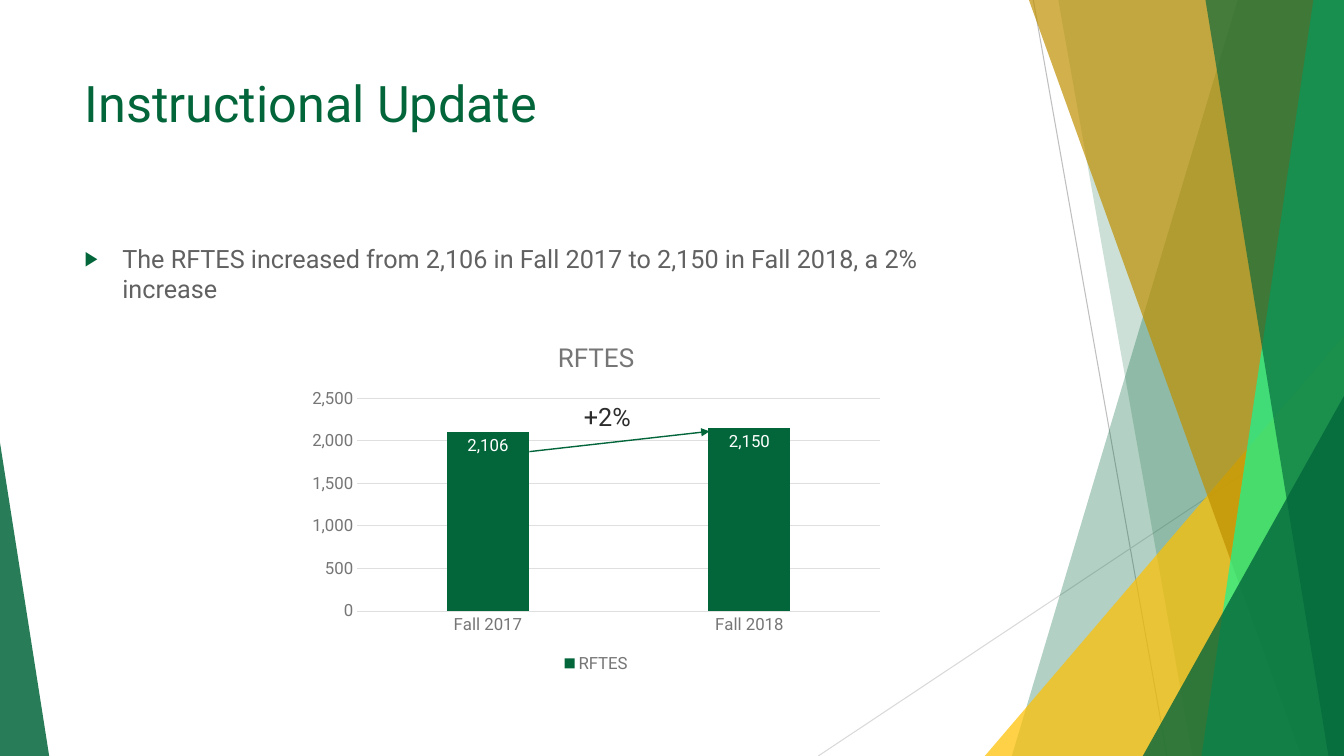
from lxml import etree
from pptx import Presentation
from pptx.chart.data import CategoryChartData
from pptx.dml.color import RGBColor
from pptx.enum.chart import XL_CHART_TYPE, XL_LABEL_POSITION, XL_LEGEND_POSITION, XL_TICK_MARK
from pptx.enum.shapes import MSO_CONNECTOR, MSO_SHAPE
from pptx.enum.text import MSO_ANCHOR, MSO_AUTO_SIZE, PP_ALIGN
from pptx.oxml.ns import qn
from pptx.util import Cm, Pt

COLUMNS = XL_CHART_TYPE.COLUMN_CLUSTERED
INSIDE_END = XL_LABEL_POSITION.INSIDE_END
LEGEND_BOTTOM = XL_LEGEND_POSITION.BOTTOM
NO_TICKS = XL_TICK_MARK.NONE
STRAIGHT = MSO_CONNECTOR.STRAIGHT
TRIANGLE = MSO_SHAPE.ISOSCELES_TRIANGLE
TOP = MSO_ANCHOR.TOP
NO_FIT = MSO_AUTO_SIZE.NONE
LEFT, CENTER = PP_ALIGN.LEFT, PP_ALIGN.CENTER

WIDTH, HEIGHT = 33.87, 19.05
FONT = "Roboto"
GREEN, MINT, GOLD, OCHRE = "03663B", "13F895", "FFC000", "BF9000"
INK, BODY_GREY, CHART_GREY = "2C2C2C", "616161", "767676"
GRID, DARK_RULE, LIGHT_RULE = "DFDFDF", "BFBFBF", "D9D9D9"


def rgb(value):
    return RGBColor.from_string(value)


def add_xml(parent, tag, **attributes):
    return etree.SubElement(parent, qn(tag), attributes)


class SlideBuilder:
    def __init__(self, slide, font):
        self.slide = slide
        self.shapes = slide.shapes
        self.font = font

    def style_font(self, font, size, color):
        font.name = self.font
        font.size = Pt(size)
        font.bold = False
        font.color.rgb = rgb(color)

    def tint(self, shape, color, opacity):
        """Fill a shape with a see-through colour, without outline or shadow."""
        shape.shadow.inherit = False
        shape.fill.solid()
        shape.fill.fore_color.rgb = rgb(color)
        shape.line.fill.background()
        swatch = shape.fill._xPr.find(qn("a:solidFill")).find(qn("a:srgbClr"))
        add_xml(swatch, "a:alpha", val=str(opacity * 1000))

    def band(self, top_x, bottom_x, color, opacity):
        """Cover everything right of a slanted, full-height edge."""
        outline = self.shapes.build_freeform(Cm(top_x), 0)
        corners = [(WIDTH, 0), (WIDTH, HEIGHT), (bottom_x, HEIGHT)]
        outline.add_line_segments([(Cm(x), Cm(y)) for x, y in corners])
        self.tint(outline.convert_to_shape(), color, opacity)

    def wedge(self, left, width, height, peak, color, opacity):
        """Stand a triangle on the bottom edge; peak is 0 (left) to 1 (right)."""
        triangle = self.shapes.add_shape(
            TRIANGLE, Cm(left), Cm(HEIGHT - height), Cm(width), Cm(height))
        triangle.adjustments[0] = peak
        self.tint(triangle, color, opacity)

    def line(self, start, end, color, width, arrow=False):
        connector = self.shapes.add_connector(
            STRAIGHT, *(Cm(length) for length in start + end))
        connector.line.color.rgb = rgb(color)
        connector.line.width = Pt(width)
        if arrow:
            add_xml(connector.line._get_or_add_ln(), "a:tailEnd", type="triangle")
        add_xml(connector._element.spPr, "a:effectLst")

    def placeholder(self, holder, text, box, size, color):
        """Place and fill a template placeholder, in front of what is drawn so far."""
        self.shapes._spTree.append(holder._element)
        holder.left, holder.top, holder.width, holder.height = map(Cm, box)
        frame = holder.text_frame
        frame.text = text
        frame.vertical_anchor = TOP
        frame.auto_size = NO_FIT
        paragraph = frame.paragraphs[0]
        paragraph.alignment = LEFT
        self.style_font(paragraph.font, size, color)
        return paragraph

    def bullet(self, paragraph, indent):
        paragraph.space_before = Pt(10)
        properties = paragraph._p.get_or_add_pPr()
        properties.set("marL", str(Cm(indent)))
        properties.set("indent", str(-Cm(indent)))
        mark = etree.Element(qn("a:buClr"))
        add_xml(mark, "a:srgbClr", val=GREEN)
        size = etree.Element(qn("a:buSzPct"), val="80000")
        face = etree.Element(qn("a:buFont"), typeface="Arial")
        char = etree.Element(qn("a:buChar"), char="▶")
        defaults = properties.find(qn("a:defRPr"))
        for part in (mark, size, face, char):
            defaults.addprevious(part)

    def label(self, text, box, size, color):
        frame = self.shapes.add_textbox(*map(Cm, box)).text_frame
        frame.word_wrap = True
        frame.text = text
        paragraph = frame.paragraphs[0]
        paragraph.alignment = CENTER
        self.style_font(paragraph.font, size, color)

    def column_chart(self, name, values, box):
        data = CategoryChartData(number_format="#,##0")
        data.categories = list(values)
        data.add_series(name, list(values.values()))
        chart = self.shapes.add_chart(COLUMNS, *map(Cm, box), data).chart
        self.style_font(chart.font, 10, INK)

        chart.has_title = True
        chart.chart_title.include_in_layout = False
        title = chart.chart_title.text_frame
        title.text = name
        self.style_font(title.paragraphs[0].font, 18.6, CHART_GREY)

        chart.has_legend = True
        chart.legend.position = LEGEND_BOTTOM
        chart.legend.include_in_layout = False
        self.style_font(chart.legend.font, 12, CHART_GREY)

        category_axis, value_axis = chart.category_axis, chart.value_axis
        for axis in (category_axis, value_axis):
            axis.major_tick_mark = axis.minor_tick_mark = NO_TICKS
            self.style_font(axis.tick_labels.font, 12, CHART_GREY)
        value_axis.minimum_scale, value_axis.maximum_scale = 0, 2500
        value_axis.major_unit = 500
        value_axis.format.line.fill.background()
        for rule in (category_axis.format.line, value_axis.major_gridlines.format.line):
            rule.color.rgb = rgb(GRID)
            rule.width = Pt(0.75)

        plot = chart.plots[0]
        plot.gap_width, plot.overlap = 219, -27
        plot.vary_by_categories = False
        columns = plot.series[0]
        columns.format.fill.solid()
        columns.format.fill.fore_color.rgb = rgb(GREEN)
        labels = columns.data_labels
        labels.show_value = True
        labels.position = INSIDE_END
        labels.number_format = "#,##0"
        labels.number_format_is_linked = False
        self.style_font(labels.font, 12, "FFFFFF")


def main():
    deck = Presentation()
    deck.slide_width, deck.slide_height = Cm(WIDTH), Cm(HEIGHT)
    slide = deck.slides.add_slide(deck.slide_layouts[1])
    builder = SlideBuilder(slide, FONT)

    builder.line((26.04, 0), (29.41, HEIGHT), DARK_RULE, 0.75)
    builder.line((WIDTH, 10.24), (20.62, HEIGHT), LIGHT_RULE, 0.75)
    builder.band(31.19, 25.5, GREEN, 30)
    builder.band(26.67, 30.05, GREEN, 20)
    builder.wedge(24.82, 9.05, 10.59, 1, GOLD, 72)
    builder.band(25.93, 32.79, OCHRE, 70)
    builder.band(33.1, 30.28, MINT, 70)
    builder.band(30.38, 33.48, GREEN, 65)
    builder.wedge(28.8, 5.07, 9.07, 1, GREEN, 80)
    builder.wedge(0, 1.24, 7.9, 0, GREEN, 85)

    builder.placeholder(slide.shapes.title, "Instructional Update",
                        (1.88, 1.7, 23.88, 3.66), 36, GREEN)
    finding = builder.placeholder(
        slide.placeholders[1],
        "The RFTES increased from 2,106 in Fall 2017 to 2,150 in Fall 2018, a 2% increase",
        (1.88, 6, 23.88, 10.77), 18, BODY_GREY)
    builder.bullet(finding, 0.95)

    builder.column_chart("RFTES", {"Fall 2017": 2106, "Fall 2018": 2150},
                         (7.57, 8.13, 14.91, 8.94))
    builder.line((13.34, 11.38), (17.88, 10.87), GREEN, 1, arrow=True)
    builder.label("+2%", (14.3, 9.98, 2.01, 1.02), 18, INK)

    deck.save("out.pptx")


if __name__ == "__main__":
    main()
